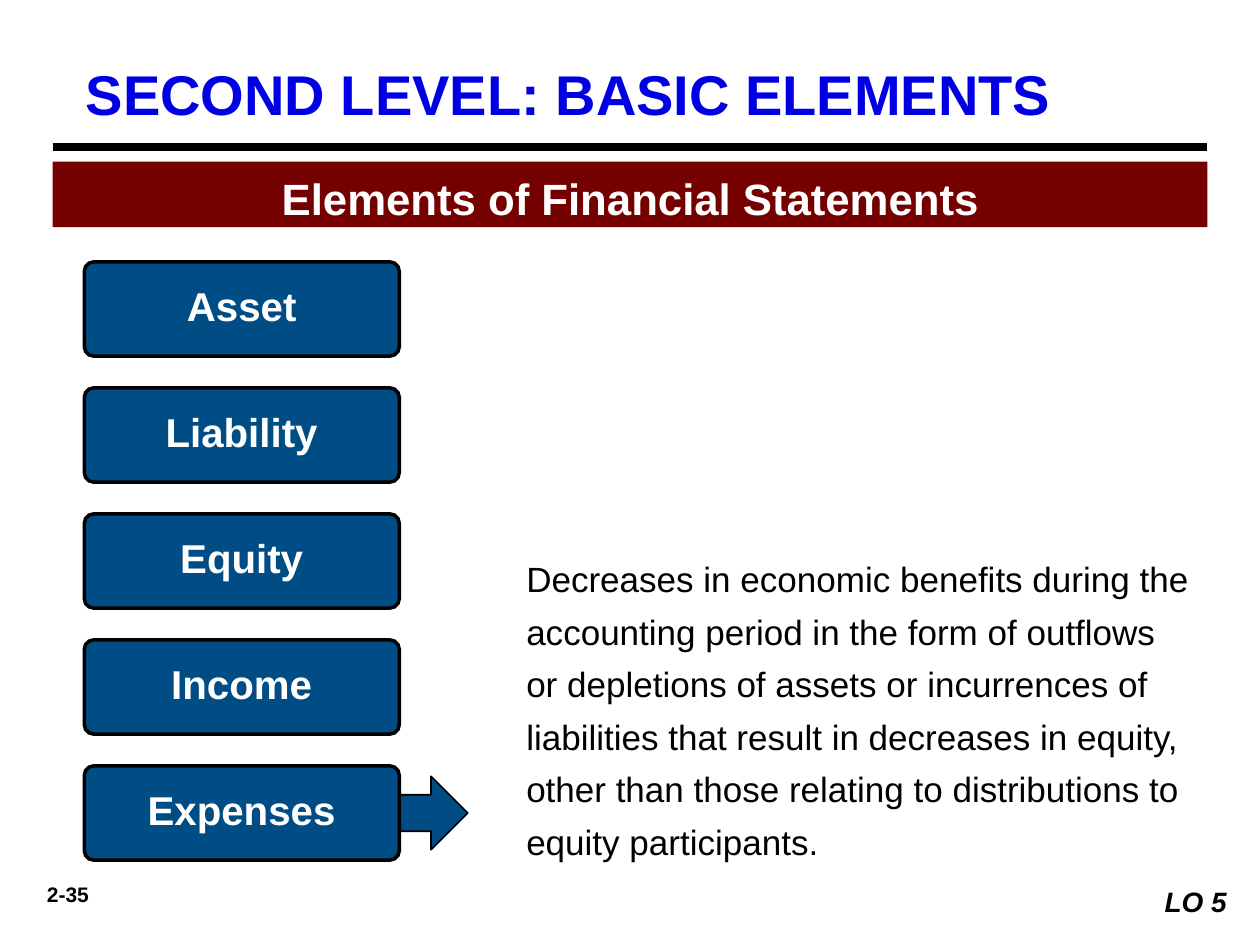
from lxml import etree
from pptx import Presentation
from pptx.dml.color import RGBColor
from pptx.enum import shapes, text
from pptx.oxml.ns import qn
from pptx.util import Cm, Pt

TITLE = "SECOND LEVEL: BASIC ELEMENTS"
BANNER = "Elements of Financial Statements"
ELEMENTS = ["Asset", "Liability", "Equity", "Income", "Expenses"]
DEFINITION = (
    "Decreases in economic benefits during the accounting period in the form "
    "of outflows or depletions of assets or incurrences of liabilities that "
    "result in decreases in equity, other than those relating to "
    "distributions to equity participants."
)
PAGE, OBJECTIVE = "2-35", "LO 5"

BLACK, WHITE, BLUE, NAVY, MAROON = "000000", "FFFFFF", "0000E2", "004D86", "740000"
ALIGN, ANCHOR, SHAPE = text.PP_ALIGN, text.MSO_ANCHOR, shapes.MSO_SHAPE

# Element boxes, in centimetres
BOX_LEFT, BOX_TOP, BOX_WIDTH, BOX_HEIGHT, BOX_STEP = 1.7, 5.28, 6.35, 1.9, 2.54
ARROW_SIZE = 1.48


def color(value):
    return RGBColor.from_string(value)


def write(shape, words, size, ink=BLACK, bold=False, italic=False,
          anchor=ANCHOR.TOP, margins=(0.13, 0.13), **paragraph_format):
    """Put one formatted paragraph in a shape; margins are top and bottom."""
    frame = shape.text_frame
    frame_format = {
        "word_wrap": True, "auto_size": text.MSO_AUTO_SIZE.NONE,
        "vertical_anchor": anchor,
        "margin_left": Cm(0.25), "margin_right": Cm(0.25),
        "margin_top": Cm(margins[0]), "margin_bottom": Cm(margins[1]),
    }
    for name, value in frame_format.items():
        setattr(frame, name, value)
    paragraph = frame.paragraphs[0]
    for name, value in {"alignment": ALIGN.LEFT, **paragraph_format}.items():
        setattr(paragraph, name, value)
    run = paragraph.add_run()
    run.text = words
    font_format = {"name": "Arial", "size": Pt(size), "bold": bold, "italic": italic}
    for name, value in font_format.items():
        setattr(run.font, name, value)
    run.font.color.rgb = color(ink)


def add_shape(slide, kind, place, fill, line_width=0):
    shape = slide.shapes.add_shape(kind, *map(Cm, place))
    shape.shadow.inherit = False
    shape.fill.solid()
    shape.fill.fore_color.rgb = color(fill)
    if line_width:
        shape.line.color.rgb = color(BLACK)
        shape.line.width = Pt(line_width)
    else:
        shape.line.fill.background()
    return shape


def add_text(slide, place, words, size, **formats):
    write(slide.shapes.add_textbox(*map(Cm, place)), words, size, **formats)


def add_heading(slide):
    title = slide.shapes.title
    title.left, title.top, title.width, title.height = map(Cm, (1.48, 1.06, 22.86, 1.55))
    write(title, TITLE, 32, ink=BLUE, bold=True)

    rule = slide.shapes.add_connector(
        shapes.MSO_CONNECTOR.STRAIGHT, *map(Cm, (1.06, 2.96, 24.34, 2.96)))
    rule.line.color.rgb = color(BLACK)
    rule.line.width = Pt(4.5)
    etree.SubElement(rule._element.spPr, qn("a:effectLst"))

    banner = add_shape(slide, SHAPE.RECTANGLE, (1.06, 3.26, 23.28, 1.32), MAROON)
    write(banner, BANNER, 25, ink=WHITE, bold=True, anchor=ANCHOR.MIDDLE,
          margins=(0, 0.13), alignment=ALIGN.CENTER, line_spacing=1.25,
          space_before=Pt(12))


def add_elements(slide):
    """Stack the element boxes, with an arrow leaving from behind the last."""
    last_top = BOX_TOP + (len(ELEMENTS) - 1) * BOX_STEP
    arrow_place = (BOX_LEFT + BOX_WIDTH - 0.1, last_top + (BOX_HEIGHT - ARROW_SIZE) / 2,
                   ARROW_SIZE, ARROW_SIZE)
    add_shape(slide, SHAPE.RIGHT_ARROW, arrow_place, NAVY, line_width=1)

    for index, name in enumerate(ELEMENTS):
        place = (BOX_LEFT, BOX_TOP + index * BOX_STEP, BOX_WIDTH, BOX_HEIGHT)
        box = add_shape(slide, SHAPE.ROUNDED_RECTANGLE, place, NAVY, line_width=2)
        box.adjustments[0] = 0.1
        write(box, name, 23, ink=WHITE, bold=True, anchor=ANCHOR.MIDDLE,
              margins=(0, 0.13), alignment=ALIGN.CENTER)


def add_footer(slide):
    add_text(slide, (0.2, 17.65, 2.34, 0.76), PAGE, 12, bold=True,
             alignment=ALIGN.CENTER)
    objective = add_shape(slide, SHAPE.RECTANGLE, (21.8, 17.7, 3.18, 0.94), WHITE)
    write(objective, OBJECTIVE, 16, bold=True, italic=True, alignment=ALIGN.RIGHT)


def main():
    presentation = Presentation()
    presentation.slide_width, presentation.slide_height = Cm(25.4), Cm(19.05)
    slide = presentation.slides.add_slide(presentation.slide_layouts[5])
    add_heading(slide)
    add_elements(slide)
    add_text(slide, (10.36, 10.9, 13.97, 6.68), DEFINITION, 20,
             line_spacing=1.25, space_before=Pt(12))
    add_footer(slide)
    presentation.save("out.pptx")


if __name__ == "__main__":
    main()
